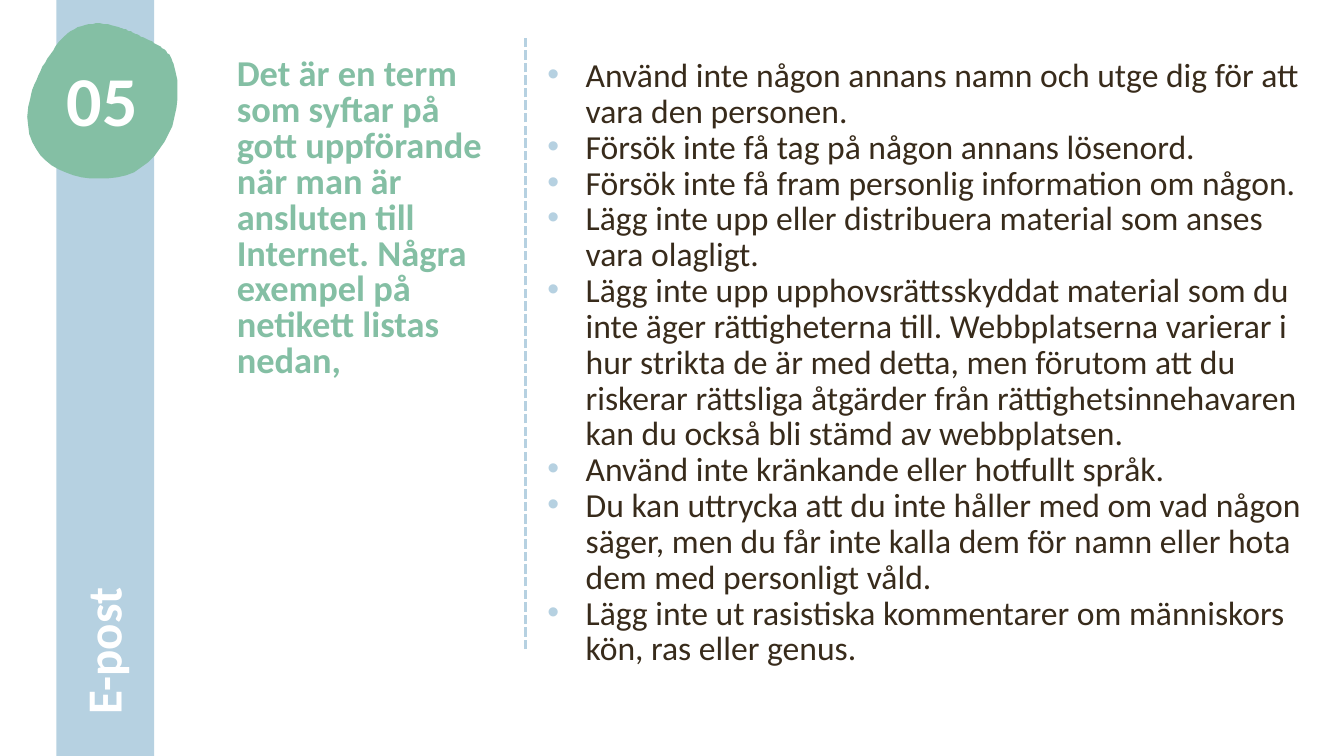
from lxml.etree import SubElement
from pptx import Presentation
from pptx.dml.color import RGBColor
from pptx.enum.dml import MSO_LINE_DASH_STYLE as Dash
from pptx.enum.shapes import MSO_CONNECTOR_TYPE as Connector, MSO_SHAPE as Shape
from pptx.enum.text import MSO_AUTO_SIZE as AutoSize, PP_ALIGN as Align
from pptx.oxml.ns import qn
from pptx.util import Emu, Pt

PX = 9144
STEPS = 16
BLUE = RGBColor(0xB6, 0xD1, 0xE1)
GREEN = RGBColor(0x84, 0xBF, 0xA4)
BROWN = RGBColor(0x38, 0x2B, 0x1B)
WHITE = RGBColor(0xFF, 0xFF, 0xFF)

BLOB_START = (118, 27)
BLOB_CURVES = [
    ((98, 21), (77, 21), (61, 39)),
    ((46, 56), (31, 84), (28, 106)),
    ((21, 160), (68, 183), (116, 176)),
    ((163, 168), (187, 107), (172, 63)),
    ((168, 50), (156, 44), (144, 38)),
    ((136, 34), (127, 30), (118, 27)),
]
INTRO = ("Det är en term som syftar på gott uppförande när man är ansluten till "
         "Internet. Några exempel på netikett listas nedan,")
RULES = [
    "Använd inte någon annans namn och utge dig för att vara den personen.",
    "Försök inte få tag på någon annans lösenord.",
    "Försök inte få fram personlig information om någon.",
    "Lägg inte upp eller distribuera material som anses vara olagligt.",
    "Lägg inte upp upphovsrättsskyddat material som du inte äger rättigheterna till. "
    "Webbplatserna varierar i hur strikta de är med detta, men förutom att du riskerar "
    "rättsliga åtgärder från rättighetsinnehavaren kan du också bli stämd av webbplatsen.",
    "Använd inte kränkande eller hotfullt språk.",
    "Du kan uttrycka att du inte håller med om vad någon säger, men du får inte kalla "
    "dem för namn eller hota dem med personligt våld.",
    "Lägg inte ut rasistiska kommentarer om människors kön, ras eller genus.",
]


def px(*lengths):
    """Turn pixel lengths into EMU."""
    return [Emu(length * PX) for length in lengths]


def paint(shape, color):
    """Give a shape a flat fill with no outline or shadow."""
    shape.shadow.inherit = False
    shape.fill.solid()
    shape.fill.fore_color.rgb = color
    shape.line.fill.background()


def curve_points(start, curves):
    """Return points along a chain of cubic curves."""
    points = []
    for first, second, end in curves:
        for step in range(1, STEPS + 1):
            t = step / STEPS
            weights = ((1 - t) ** 3, 3 * t * (1 - t) ** 2, 3 * t * t * (1 - t), t ** 3)
            corners = (start, first, second, end)
            points.append(tuple(
                sum(weight * corner[axis] for weight, corner in zip(weights, corners))
                for axis in (0, 1)))
        start = end
    return points


def add_blob(page):
    """Draw the rounded badge behind the chapter number."""
    builder = page.shapes.build_freeform(*BLOB_START, scale=PX)
    builder.add_line_segments(curve_points(BLOB_START, BLOB_CURVES), close=True)
    paint(builder.convert_to_shape(), GREEN)


def add_divider(page, x, top, bottom):
    """Draw the dashed vertical line."""
    line = page.shapes.add_connector(Connector.STRAIGHT, *px(x, bottom, x, top))
    line.line.color.rgb = BLUE
    line.line.width = Pt(2.25)
    line.line.dash_style = Dash.SQUARE_DOT
    SubElement(line._element.spPr, qn("a:effectLst"))


def indent(para, left, hanging=0, bullet=None):
    """Set the indent of a paragraph and its optional bullet."""
    properties = para._p.get_or_add_pPr()
    properties.set("marL", str(left * PX))
    properties.set("indent", str(-hanging * PX))
    if bullet:
        color = SubElement(properties, qn("a:buClr"))
        SubElement(color, qn("a:srgbClr"), val=str(BLUE))
        SubElement(properties, qn("a:buFont"), typeface="Arial")
        SubElement(properties, qn("a:buChar"), char=bullet)


def add_text(page, bounds, texts, size, color, spacing, bold=True, align=Align.LEFT, margins=None):
    """Add a text box with one paragraph per text."""
    box = page.shapes.add_textbox(*px(*bounds))
    frame = box.text_frame
    frame.word_wrap = True
    for index, text in enumerate(texts):
        para = frame.paragraphs[0] if index == 0 else frame.add_paragraph()
        if margins:
            indent(para, **margins)
        para.alignment = align
        para.line_spacing = spacing
        span = para.add_run()
        span.text = text
        span.font.color.rgb = color
        formats = {"name": "Calibri", "size": Pt(size), "bold": bold}
        for name, value in formats.items():
            setattr(span.font, name, value)
    return box


def main():
    """Build the slide and save it."""
    deck = Presentation()
    deck.slide_width, deck.slide_height = px(1333, 750)
    page = deck.slides.add_slide(deck.slide_layouts[6])
    band = page.shapes.add_shape(Shape.RECTANGLE, *px(56, 0, 97, 750))
    paint(band, BLUE)
    add_blob(page)
    chapter = add_text(page, (-315, 263, 840, 71), ["E-post"], 35, WHITE, Pt(40.2))
    chapter.rotation = 270
    add_text(page, (17, 61, 169, 94), ["05"], 50, WHITE, 0.9, align=Align.CENTER)
    intro = add_text(page, (223, 53, 272, 339), [INTRO], 26, GREEN, Pt(25.6),
                     margins={"left": 2})
    intro.text_frame.auto_size = AutoSize.SHAPE_TO_FIT_TEXT
    add_text(page, (532, 53, 775, 551), RULES, 24, BROWN, Pt(25.6), bold=False,
             margins={"left": 39, "hanging": 38, "bullet": "•"})
    add_divider(page, 521, 36, 644)
    deck.save("out.pptx")


if __name__ == "__main__":
    main()
